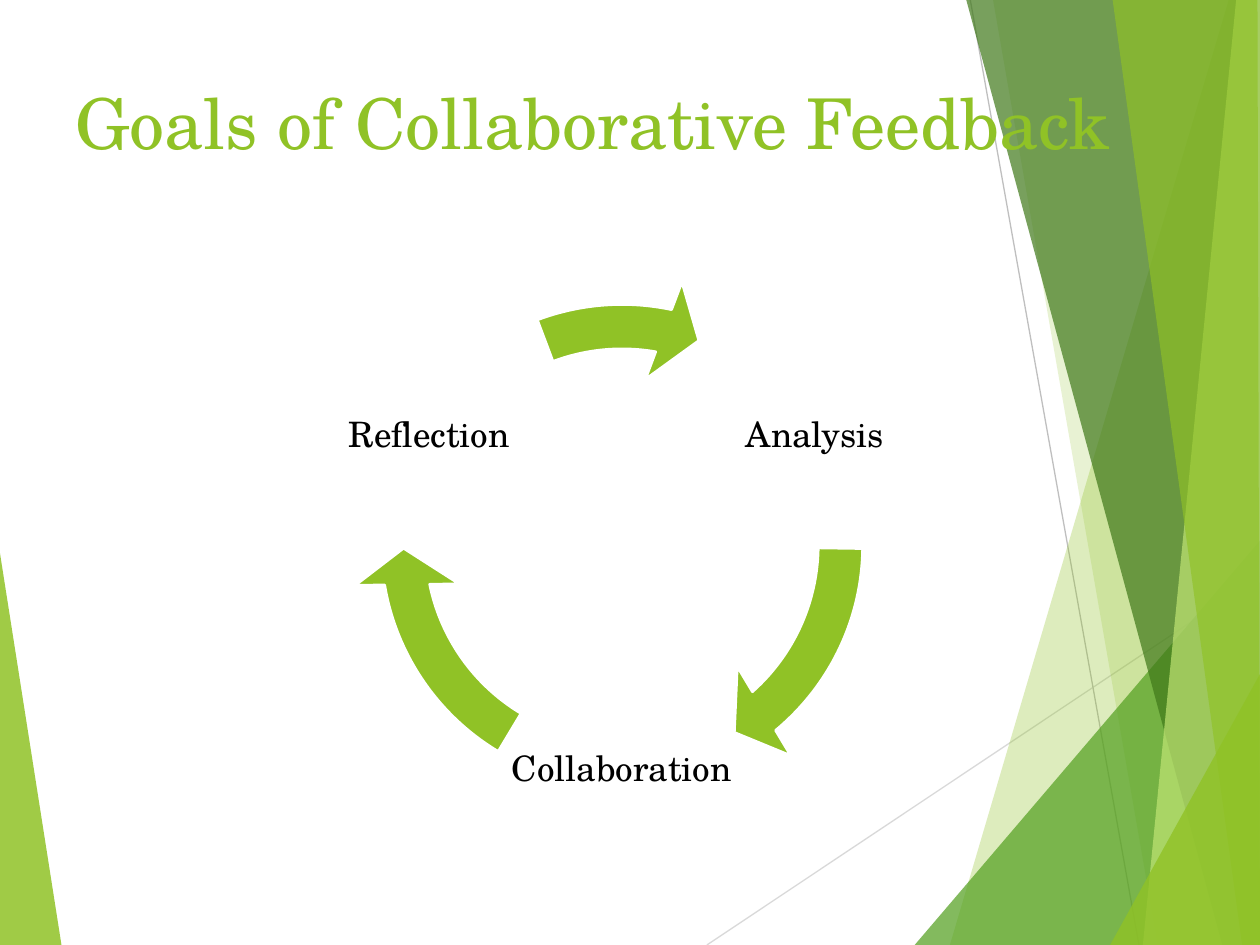
from math import cos, radians, sin

from lxml import etree
from pptx import Presentation
from pptx.dml.color import RGBColor
from pptx.enum.shapes import MSO_CONNECTOR, MSO_SHAPE
from pptx.enum.text import MSO_ANCHOR, PP_ALIGN
from pptx.oxml.ns import qn
from pptx.util import Cm, Pt

STRAIGHT = MSO_CONNECTOR.STRAIGHT
ARROW = MSO_SHAPE.CIRCULAR_ARROW
TOP, MIDDLE = MSO_ANCHOR.TOP, MSO_ANCHOR.MIDDLE
LEFT, CENTER = PP_ALIGN.LEFT, PP_ALIGN.CENTER

# Lengths are in centimetres, angles in degrees clockwise from the right
W, H = 25.4, 19.05
FONT = "TeX Gyre Schola"
GREEN = "90C226"

TITLE = "Goals of Collaborative Feedback"
TITLE_BOX = (1.27, 1.47, 22.86, 3.18)

# Step, angle of its label, start and end angle of the arrow after it
STEPS = [
    ("Analysis", -30, 0.82, 49.45),
    ("Collaboration", 90, 120.96, 169.59),
    ("Reflection", 210, 249.41, 281),
]
RING_X, RING_Y = 12.54, 10.99
RING_SIZE, LABEL_RADIUS, LABEL_SIZE = 10.9, 4.49, 4.6
BAND_WIDTH, HEAD_ANGLE, HEAD_WIDTH = 0.082, 9.59, 0.096

# Colour, opacity in percent, corners
LEFT_FACET = (GREEN, 85, [(0, 11.15), (1.24, H), (0, H)])
RIGHT_FACETS = [
    (GREEN, 30, [(24.77, 0), (19.15, H), (W, H), (W, 0)]),
    (GREEN, 20, [(20.02, 0), (23.34, H), (W, H), (W, 0)]),
    ("54A021", 72, [(18.44, H), (W, 10.9), (W, H)]),
    ("3F7819", 70, [(19.48, 0), (24.64, H), (W, H), (W, 0)]),
    ("C0E474", 70, [(24.92, 0), (23.04, H), (W, H), (W, 0)]),
    (GREEN, 65, [(22.43, 0), (25.04, H), (W, H), (25.35, 0)]),
    (GREEN, 80, [(22.38, H), (W, 13.59), (W, H)]),
]
RAYS = [
    ("D9D9D9", (14.25, H, W, 11.61)),
    ("BFBFBF", (19.56, 0, 22.96, H)),
]


def rgb(value):
    return RGBColor.from_string(value)


def cm(*lengths):
    return [Cm(length) for length in lengths]


def fill_solid(shape, color):
    shape.shadow.inherit = False
    shape.fill.solid()
    shape.fill.fore_color.rgb = rgb(color)


def add_facet(shapes, color, opacity, corners):
    points = [cm(*corner) for corner in corners]
    builder = shapes.build_freeform(*points[0])
    builder.add_line_segments(points[1:], close=True)
    facet = builder.convert_to_shape()
    fill_solid(facet, color)
    facet.line.fill.background()
    color_element = facet._element.spPr.find(qn("a:solidFill"))[0]
    etree.SubElement(color_element, qn("a:alpha"), val=str(opacity * 1000))


def add_ray(shapes, color, ends):
    ray = shapes.add_connector(STRAIGHT, *cm(*ends))
    ray.line.color.rgb = rgb(color)
    ray.line.width = Pt(0.75)
    etree.SubElement(ray._element.spPr, qn("a:effectLst"))


def write(frame, text, size, color, align, anchor):
    frame.word_wrap = True
    frame.vertical_anchor = anchor
    paragraph = frame.paragraphs[0]
    paragraph.alignment = align
    run = paragraph.add_run()
    run.text = text
    run.font.name = FONT
    run.font.size = Pt(size)
    run.font.color.rgb = rgb(color)


def add_label(shapes, text, angle):
    x = RING_X + LABEL_RADIUS * cos(radians(angle)) - LABEL_SIZE / 2
    y = RING_Y + LABEL_RADIUS * sin(radians(angle)) - LABEL_SIZE / 2
    frame = shapes.add_textbox(*cm(x, y, LABEL_SIZE, LABEL_SIZE)).text_frame
    frame.margin_left = frame.margin_right = Cm(0.08)
    frame.margin_top = frame.margin_bottom = Cm(0.08)
    write(frame, text, 20, "000000", CENTER, MIDDLE)


def add_arrow(shapes, start, end):
    corner = RING_X - RING_SIZE / 2, RING_Y - RING_SIZE / 2
    arrow = shapes.add_shape(ARROW, *cm(*corner, RING_SIZE, RING_SIZE))
    # Angles are stored in 60000ths of a degree, adjustments in 100000ths
    head, tip, tail = (angle * 0.6 for angle in (HEAD_ANGLE, end, start))
    for i, value in enumerate((BAND_WIDTH, head, tip, tail, HEAD_WIDTH)):
        arrow.adjustments[i] = value
    fill_solid(arrow, GREEN)
    arrow.line.color.rgb = rgb("FFFFFF")
    arrow.line.width = Pt(1.5)


def main():
    deck = Presentation()
    deck.slide_width, deck.slide_height = cm(W, H)
    slide = deck.slides.add_slide(deck.slide_layouts[5])

    backdrop = slide.shapes.add_group_shape().shapes
    add_facet(backdrop, *LEFT_FACET)
    for ray in RAYS:
        add_ray(backdrop, *ray)
    for facet in RIGHT_FACETS:
        add_facet(backdrop, *facet)

    title = slide.shapes.title
    title.left, title.top, title.width, title.height = cm(*TITLE_BOX)
    write(title.text_frame, TITLE, 40, GREEN, LEFT, TOP)
    slide.shapes._spTree.append(title._element)  # in front of the backdrop

    cycle = slide.shapes.add_group_shape().shapes
    for step, angle, start, end in STEPS:
        add_label(cycle, step, angle)
        add_arrow(cycle, start, end)

    deck.save("out.pptx")


if __name__ == "__main__":
    main()
